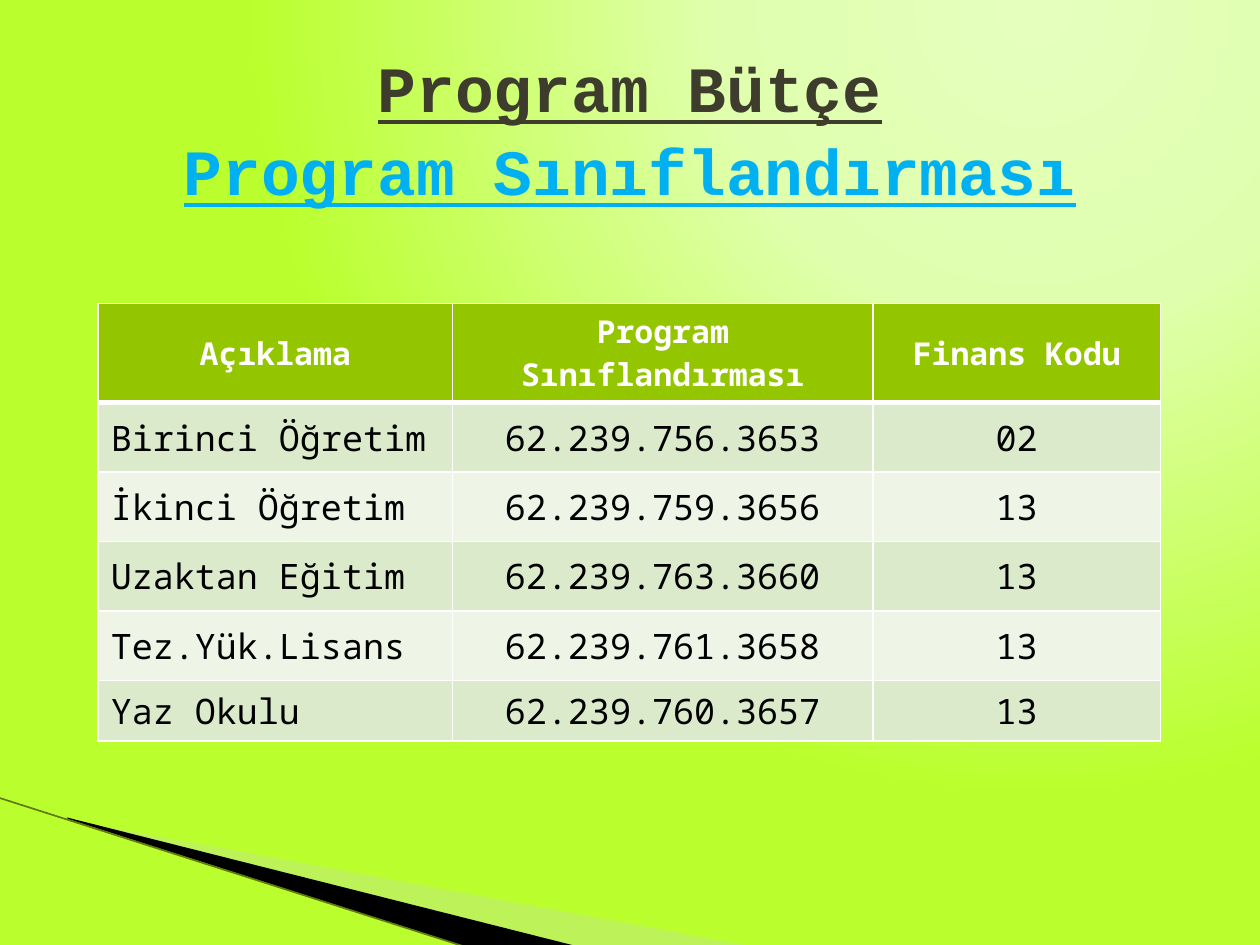
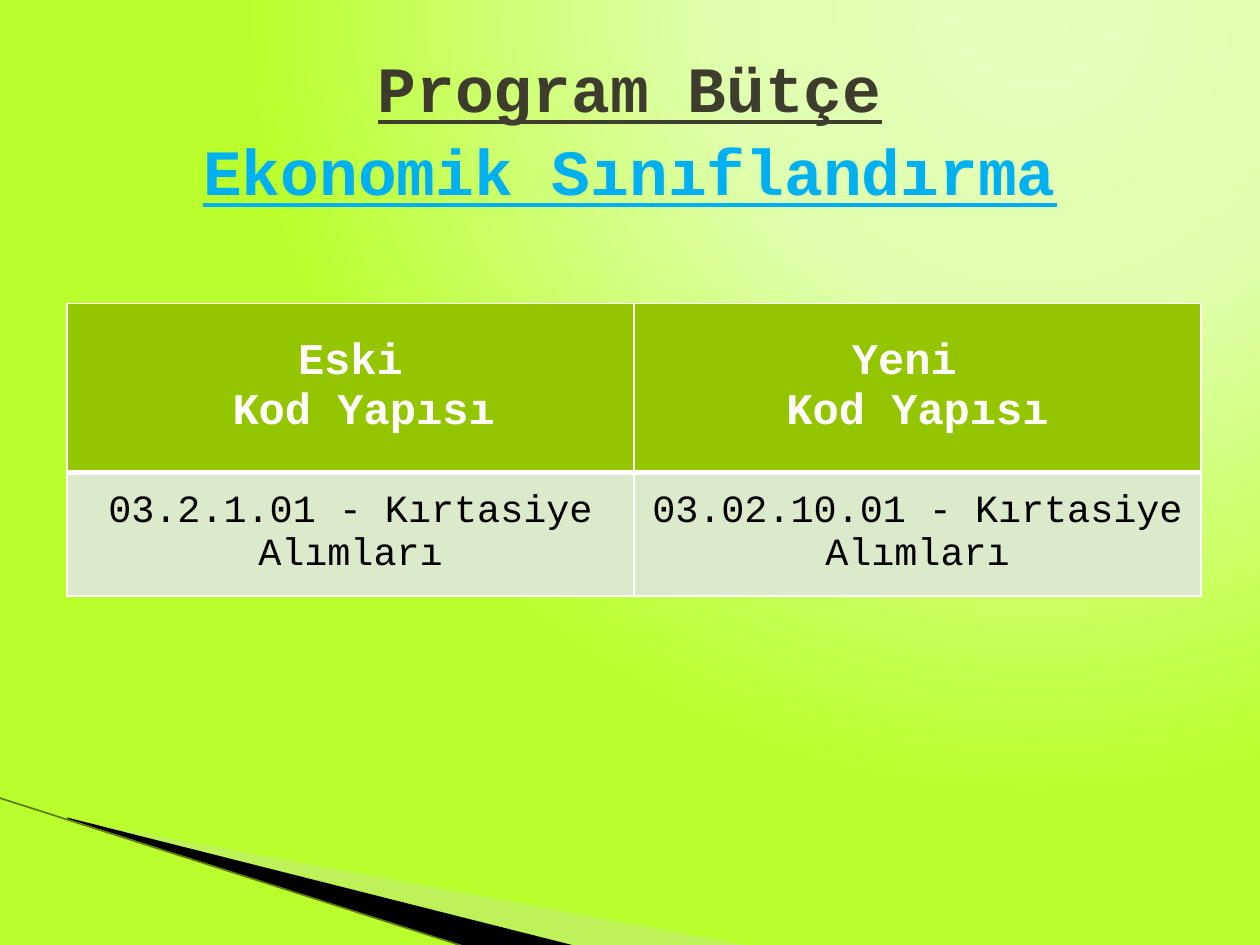
"""Builds two slides on programme budget codes, each with a title and a table."""
from lxml.etree import SubElement
from pptx import Presentation
from pptx.dml.color import RGBColor
from pptx.enum.shapes import MSO_CONNECTOR
from pptx.enum.text import MSO_ANCHOR, MSO_AUTO_SIZE, PP_ALIGN
from pptx.oxml import parse_xml
from pptx.oxml.ns import nsdecls, qn
from pptx.util import Cm, Pt

DARK = RGBColor(0x3E, 0x3D, 0x2D)
BLUE = RGBColor(0x00, 0xB0, 0xF0)
WHITE = RGBColor(0xFF, 0xFF, 0xFF)
BLACK = RGBColor(0x00, 0x00, 0x00)
HEADER_GREEN = RGBColor(0x94, 0xC6, 0x00)
BAND_GREENS = [RGBColor(0xEE, 0xF5, 0xE7), RGBColor(0xDC, 0xEA, 0xCC)]
SWOOSH_GREEN = RGBColor(0xC3, 0xE1, 0x9D)
EDGE_GREEN = RGBColor(0x5F, 0x7A, 0x0F)
TITLE_FONT = "Courier New"

GRADIENT = f"""<a:gradFill {nsdecls("a")} rotWithShape="1"><a:gsLst>
<a:gs pos="0"><a:srgbClr val="E5FFBD"/></a:gs>
<a:gs pos="40000"><a:srgbClr val="E0FFAE"/></a:gs>
<a:gs pos="100000"><a:srgbClr val="BAFF2D"/></a:gs></a:gsLst>
<a:path path="circle"><a:fillToRect l="65000" t="0" r="0" b="98000"/></a:path></a:gradFill>"""

SWOOSHES = [
    (SWOOSH_GREEN, 40, [(1.4, 16.53), (15.11, 19.07), (11.58, 19.07), (1.4, 16.51)]),
    (BLACK, 100, [(1.35, 16.48), (11.61, 19.07), (9.45, 19.1), (1.37, 16.51)]),
]

PAGES = [
    {
        "subtitle": "Program Sınıflandırması",
        "font": "Noto Sans Mono", "header_size": 18, "body_size": 20,
        "left": 1.98, "columns": [7.14, 8.48, 5.79],
        "heights": [2.0, 1.4, 1.4, 1.4, 1.4, 1.04], "first_align": PP_ALIGN.LEFT,
        "rows": [
            ["Açıklama", "Program Sınıflandırması", "Finans Kodu"],
            ["Birinci Öğretim", "62.239.756.3653", "02"],
            ["İkinci Öğretim", "62.239.759.3656", "13"],
            ["Uzaktan Eğitim", "62.239.763.3660", "13"],
            ["Tez.Yük.Lisans", "62.239.761.3658", "13"],
            ["Yaz Okulu", "62.239.760.3657", "13"],
        ],
    },
    {
        "subtitle": "Ekonomik Sınıflandırma",
        "font": TITLE_FONT, "header_size": 25, "body_size": 22,
        "left": 1.35, "columns": [11.43, 11.43],
        "heights": [3.4, 2.49], "first_align": PP_ALIGN.CENTER,
        "rows": [
            ["Eski\n Kod Yapısı", "Yeni \nKod Yapısı"],
            ["03.2.1.01 - Kırtasiye Alımları", "03.02.10.01 - Kırtasiye Alımları"],
        ],
    },
]


def add_span(para, text, font, size, color, bold):
    span = para.add_run()
    span.text = text
    span.font.name = font
    span.font.size = Pt(size)
    span.font.bold = bold
    span.font.color.rgb = color
    return span


def add_borders(cell, widths):
    properties = cell._tc.get_or_add_tcPr()
    for side, width in zip("LRTB", widths):
        properties.append(parse_xml(
            f'<a:ln{side} {nsdecls("a")} w="{Pt(width)}"><a:solidFill>'
            f'<a:srgbClr val="{WHITE}"/></a:solidFill></a:ln{side}>'))


deck = Presentation()
deck.slide_width, deck.slide_height = Cm(25.4), Cm(19.05)

background = deck.slide_master.background
background.fill.solid()
solid = background._cSld.find(".//" + qn("a:solidFill"))
solid.getparent().replace(solid, parse_xml(GRADIENT))

for content in PAGES:
    page = deck.slides.add_slide(deck.slide_layouts[5])

    for color, opacity, points in SWOOSHES:
        start, *rest = [(Cm(x), Cm(y)) for x, y in points]
        builder = page.shapes.build_freeform(*start)
        builder.add_line_segments(rest)
        swoosh = builder.convert_to_shape()
        swoosh.shadow.inherit = False
        swoosh.line.fill.background()
        swoosh.fill.solid()
        swoosh.fill.fore_color.rgb = color
        if opacity < 100:
            shade = swoosh._element.spPr.find(".//" + qn("a:srgbClr"))
            SubElement(shade, qn("a:alpha"), val=str(opacity * 1000))

    edge = page.shapes.add_connector(
        MSO_CONNECTOR.STRAIGHT, Cm(-0.03), Cm(16.08), Cm(9.42), Cm(19.1))
    edge.line.color.rgb = EDGE_GREEN
    edge.line.width = Pt(0.95)
    SubElement(edge._element.spPr, qn("a:effectLst"))

    rows = content["rows"]
    table = page.shapes.add_table(
        len(rows), len(rows[0]), Cm(content["left"]), Cm(6.12),
        Cm(sum(content["columns"])), Cm(sum(content["heights"]))).table
    for column, width in zip(table.columns, content["columns"]):
        column.width = Cm(width)
    for row, height in zip(table.rows, content["heights"]):
        row.height = Cm(height)

    for row_number, texts in enumerate(rows):
        header = row_number == 0
        size = content["header_size"] if header else content["body_size"]
        for column_number, text in enumerate(texts):
            cell = table.cell(row_number, column_number)
            add_borders(cell, [1, 1, 3 if row_number == 1 else 1, 3 if header else 1])
            cell.fill.solid()
            cell.fill.fore_color.rgb = HEADER_GREEN if header else BAND_GREENS[row_number % 2]
            cell.vertical_anchor = MSO_ANCHOR.MIDDLE
            for line_number, line in enumerate(text.split("\n")):
                frame = cell.text_frame
                para = frame.add_paragraph() if line_number else frame.paragraphs[0]
                centred = header or column_number > 0
                para.alignment = PP_ALIGN.CENTER if centred else content["first_align"]
                add_span(para, line, content["font"], size, WHITE if header else BLACK, header)

    title = page.shapes.title
    title.left, title.top, title.width, title.height = Cm(1.27), Cm(0.76), Cm(22.86), Cm(3.18)
    frame = title.text_frame
    frame.auto_size = MSO_AUTO_SIZE.NONE
    frame.word_wrap = True
    frame.vertical_anchor = MSO_ANCHOR.MIDDLE
    frame.margin_top, frame.margin_bottom = Cm(0.34), Cm(0)
    para = frame.paragraphs[0]
    para.alignment = PP_ALIGN.CENTER
    para.line_spacing = 1.07
    add_span(para, "Program Bütçe", TITLE_FONT, 36.9, DARK, True).font.underline = True
    para.add_line_break()
    add_span(para, content["subtitle"], TITLE_FONT, 36.9, BLUE, True).font.underline = True

deck.save("out.pptx")
